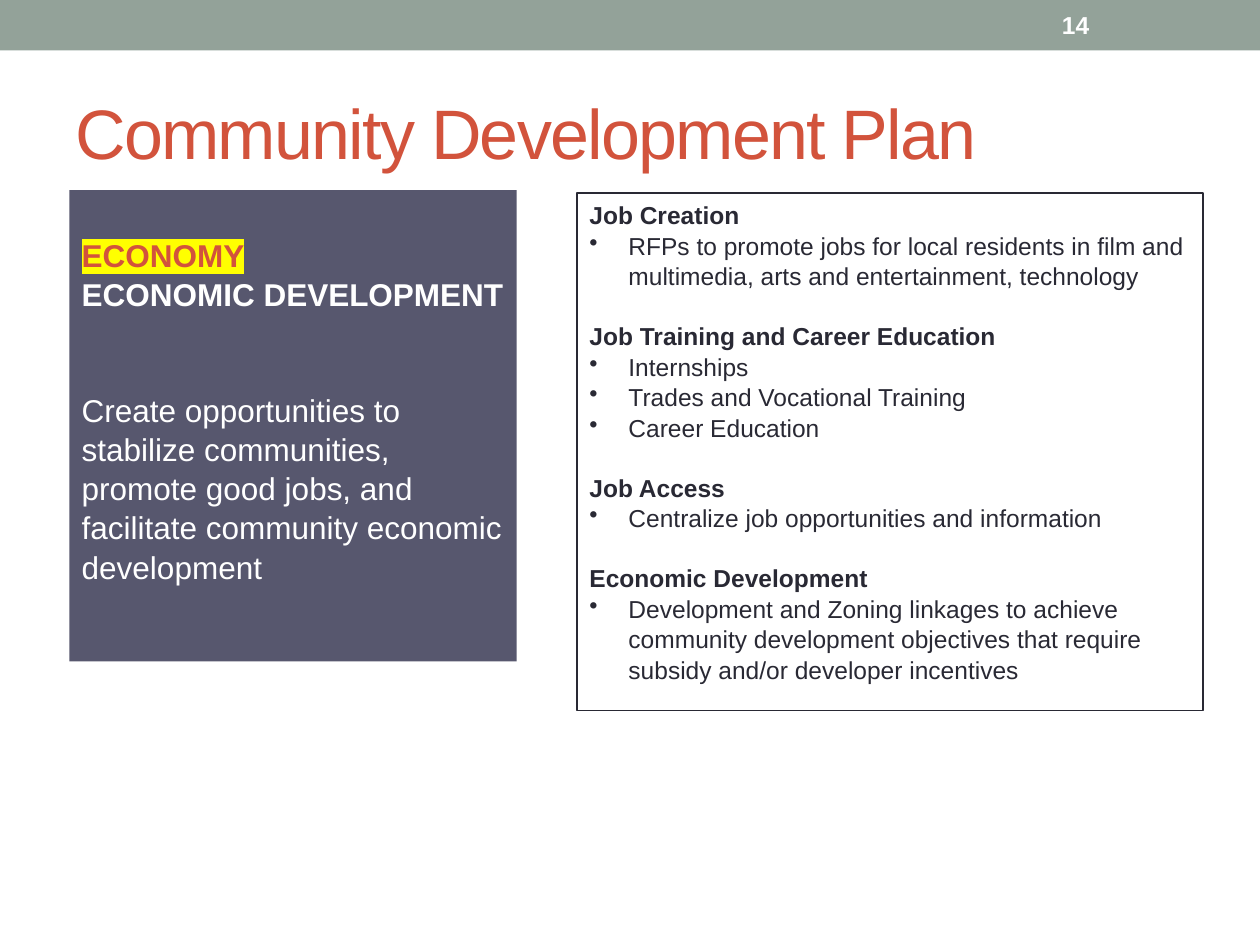
import pptx
import pptx.util
import pptx.dml.color
import pptx.enum.shapes
import pptx.enum.text
import pptx.oxml
import pptx.oxml.ns

Inches = pptx.util.Inches
Pt = pptx.util.Pt
ANCHOR = pptx.enum.text.MSO_ANCHOR
qn = pptx.oxml.ns.qn

COLORS = {
    "band": "93A299",
    "accent": "D2533C",
    "dark": "292934",
    "panel": "57576E",
    "white": "FFFFFF",
    "highlight": "FFFF00",
}

TOPICS = [
    ("Job Creation", [
        "RFPs to promote jobs for local residents in film and multimedia, arts and entertainment, technology",
    ]),
    ("Job Training and Career Education", [
        "Internships",
        "Trades and Vocational Training",
        "Career Education",
    ]),
    ("Job Access", ["Centralize job opportunities and information"]),
    ("Economic Development", [
        "Development and Zoning linkages to achieve community development objectives "
        "that require subsidy and/or developer incentives",
    ]),
]

LINE_SPACING = 1.04


def rgb(name):
    return pptx.dml.color.RGBColor.from_string(COLORS[name])


def apply(obj, values):
    for name, value in values.items():
        setattr(obj, name, value)


def set_frame(sp, **values):
    tf = sp.text_frame
    apply(tf, {"word_wrap": True, "vertical_anchor": ANCHOR.TOP, **values})
    return tf


def add_box(s, at, fill=None, line=None):
    sp = s.shapes.add_shape(pptx.enum.shapes.MSO_SHAPE.RECTANGLE, *map(Inches, at))
    sp.shadow.inherit = False
    if fill:
        sp.fill.solid()
        sp.fill.fore_color.rgb = rgb(fill)
    else:
        sp.fill.background()
    if line:
        sp.line.color.rgb = rgb(line)
        sp.line.width = Pt(1)
    else:
        sp.line.fill.background()
    return sp


def add_paragraph(tf, text, size, color, bold=False, **values):
    p = tf.paragraphs[0] if not tf.text else tf.add_paragraph()
    apply(p, {"alignment": pptx.enum.text.PP_ALIGN.LEFT, **values})
    r = p.add_run()
    r.text = text
    apply(r.font, {"name": "Arial", "size": Pt(size), "bold": bold})
    r.font.color.rgb = rgb(color)
    return p


def add_label(s, at, text, size, color, bold=False):
    sp = s.shapes.add_textbox(*map(Inches, at))
    tf = set_frame(sp, vertical_anchor=ANCHOR.MIDDLE)
    return add_paragraph(tf, text, size, color, bold)


def set_bullet(p):
    pPr = p._p.get_or_add_pPr()
    pPr.set("marL", str(Inches(0.31)))
    pPr.set("indent", str(-Inches(0.31)))
    bullet = pptx.oxml.parse_xml(f'<a:buChar {pptx.oxml.ns.nsdecls("a")} char="•"/>')
    pPr.append(bullet)


def set_highlight(p, color):
    rPr = p.runs[0]._r.get_or_add_rPr()
    mark = pptx.oxml.parse_xml(
        f'<a:highlight {pptx.oxml.ns.nsdecls("a")}>'
        f'<a:srgbClr val="{COLORS[color]}"/></a:highlight>'
    )
    rPr.find(qn("a:solidFill")).addnext(mark)


def add_topics(s):
    sp = add_box(s, (4.58, 1.53, 4.97, 4.11), line="dark")
    tf = set_frame(sp)
    for i, (heading, items) in enumerate(TOPICS):
        add_paragraph(tf, heading, 14, "dark", True, line_spacing=LINE_SPACING,
                      space_before=Pt(16.8 if i else 0))
        for item in items:
            set_bullet(add_paragraph(tf, item, 14, "dark", line_spacing=LINE_SPACING))


def add_goal(s):
    sp = add_box(s, (0.55, 1.51, 3.55, 3.74), fill="panel")
    tf = set_frame(sp, margin_top=Inches(0.35))
    p = add_paragraph(tf, "ECONOMY", 18, "accent", True, line_spacing=LINE_SPACING)
    set_highlight(p, "highlight")
    add_paragraph(tf, "ECONOMIC DEVELOPMENT", 18, "white", True, line_spacing=LINE_SPACING)
    add_paragraph(
        tf,
        "Create opportunities to stabilize communities, promote good jobs, "
        "and facilitate community economic development",
        18, "white", line_spacing=LINE_SPACING, space_before=Pt(43.5),
    )


def main():
    prs = pptx.Presentation()
    apply(prs, {"slide_width": Inches(10), "slide_height": Inches(7.5)})
    s = prs.slides.add_slide(prs.slide_layouts[6])
    add_box(s, (0, 0, 10, 0.4), fill="band")
    title = add_label(s, (0.5, 0.5, 9, 1.08), "Community Development Plan", 40, "accent")
    title.runs[0]._r.get_or_add_rPr().set("spc", "-100")
    add_label(s, (8.33, 0.02, 1.17, 0.36), "14", 14, "white", True)
    add_topics(s)
    add_goal(s)
    prs.save("out.pptx")


if __name__ == "__main__":
    main()
